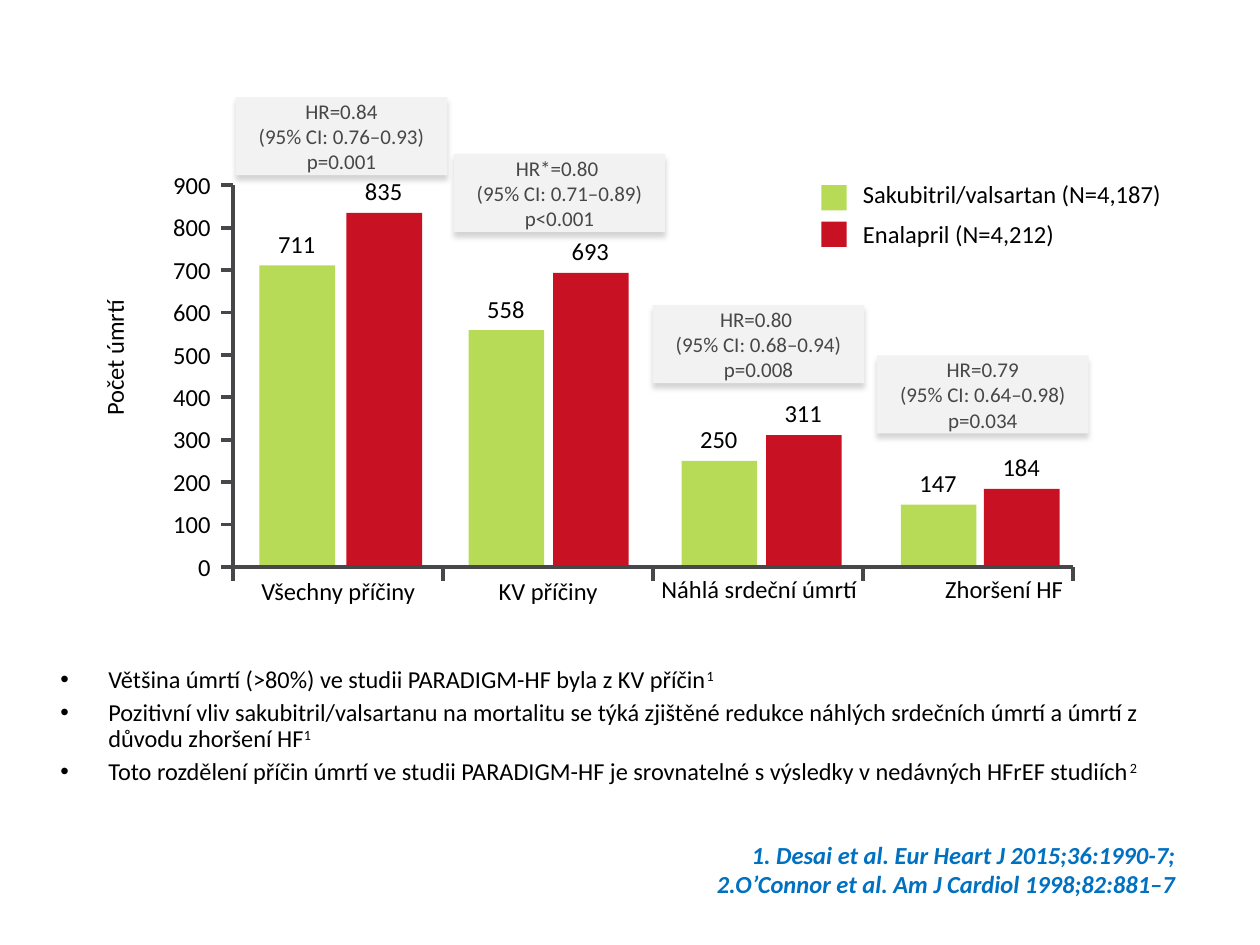
from dataclasses import dataclass

from lxml import etree
from pptx import Presentation
from pptx import util as u
from pptx.dml.color import RGBColor
from pptx.enum import shapes, text
from pptx.oxml import ns

BLACK = RGBColor(0, 0, 0)
GREY = RGBColor(0x47, 0x47, 0x49)
PALE = RGBColor(0xF2, 0xF2, 0xF2)
GREEN = RGBColor(0xB8, 0xDB, 0x57)
RED = RGBColor(0xC9, 0x11, 0x24)
BLUE = RGBColor(0x00, 0x70, 0xC0)

LEFT, CENTER, RIGHT = text.PP_ALIGN.LEFT, text.PP_ALIGN.CENTER, text.PP_ALIGN.RIGHT
AXIS_X, AXIS_TOP, AXIS_Y = 1.85, 1.47, 4.5
CATEGORY_W = 1.667
MAX_VALUE, STEP = 900, 100
BAR_W, LABEL_H = 0.6, 0.34


@dataclass
class Box:
    left: float
    top: float
    width: float
    height: float

    def lengths(self):
        return [u.Inches(v) for v in (self.left, self.top, self.width, self.height)]


@dataclass
class Group:
    """One cause of death: its label, bar pair and hazard ratio note."""
    name: str
    label: Box
    bar_lefts: tuple[float, float]
    values: tuple[int, int]
    note: Box
    note_lines: tuple[str, str]
    label_format: dict


TIGHT = {"line_spacing": u.Pt(16)}
GROUPS = [
    Group("Všechny příčiny", Box(1.89, 4.52, 1.59, 0.34), (2.06, 2.75), (711, 835),
          Box(1.87, 0.77, 1.68, 0.62), ("HR=0.84\n(95% CI: 0.76–0.93)", "p=0.001"), {}),
    Group("KV příčiny", Box(3.8, 4.52, 1.1, 0.34), (3.72, 4.39), (558, 693),
          Box(3.6, 1.22, 1.68, 0.62), ("HR*=0.80 \n(95% CI: 0.71–0.89)", "p<0.001"), {}),
    Group("Náhlá srdeční úmrtí", Box(5.07, 4.52, 1.91, 0.33), (5.41, 6.08), (250, 311),
          Box(5.18, 2.42, 1.68, 0.62), ("HR=0.80 \n(95% CI: 0.68–0.94)", "p=0.008"), TIGHT),
    Group("Zhoršení HF", Box(6.97, 4.52, 2, 0.33), (7.15, 7.81), (147, 184),
          Box(6.96, 2.82, 1.68, 0.62), ("HR=0.79\n(95% CI: 0.64–0.98)", "p=0.034"), TIGHT),
]
BULLETS = [
    ("Většina úmrtí (>80%) ve studii PARADIGM-HF byla z KV příčin", "1"),
    ("Pozitivní vliv sakubitril/valsartanu na mortalitu se týká zjištěné redukce "
     "náhlých srdečních úmrtí a úmrtí z důvodu zhoršení HF", "1"),
    ("Toto rozdělení příčin úmrtí ve studii PARADIGM-HF je srovnatelné s výsledky "
     "v nedávných HFrEF studiích", "2"),
]


def apply(obj, values: dict):
    for name, value in values.items():
        setattr(obj, name, value)


def style_run(r, size: float, color: RGBColor, **extra):
    apply(r.font, {"name": "Calibri", "size": u.Pt(size), **extra})
    r.font.color.rgb = color


def write(tf, lines, align, size=14, color=BLACK, paragraph=None, **font):
    for i, line in enumerate(lines):
        p = tf.paragraphs[0] if i == 0 else tf.add_paragraph()
        p.text = line
        apply(p, {"alignment": align, **(paragraph or {})})
        for r in p.runs:
            style_run(r, size, color, **font)


def add_text(slide, box: Box, lines, align, wrap=False, **style):
    sp = slide.shapes.add_textbox(*box.lengths())
    apply(sp.text_frame, {"word_wrap": wrap, "auto_size": text.MSO_AUTO_SIZE.SHAPE_TO_FIT_TEXT})
    write(sp.text_frame, lines, align, **style)
    return sp


def add_rect(slide, box: Box, color: RGBColor):
    sp = slide.shapes.add_shape(shapes.MSO_SHAPE.RECTANGLE, *box.lengths())
    sp.shadow.inherit = False
    sp.fill.solid()
    sp.fill.fore_color.rgb = color
    sp.line.fill.background()
    return sp


def add_note(slide, box: Box, lines):
    sp = add_rect(slide, box, PALE)
    effects = sp._element.spPr.find(ns.qn("a:effectLst"))
    shadow = etree.SubElement(effects, ns.qn("a:outerShdw"), blurRad=str(u.Pt(3)),
                              dist=str(u.Pt(3)), dir="5400000", algn="t", rotWithShape="0")
    black = etree.SubElement(shadow, ns.qn("a:srgbClr"), val="000000")
    etree.SubElement(black, ns.qn("a:alpha"), val="16000")
    sides = ("left", "top", "right", "bottom")
    apply(sp.text_frame, {f"margin_{side}": u.Inches(0.08) for side in sides})
    apply(sp.text_frame, {"word_wrap": True, "vertical_anchor": text.MSO_ANCHOR.MIDDLE})
    write(sp.text_frame, lines, CENTER, size=12, color=GREY)


def style_line(sp):
    sp.line.color.rgb = GREY
    sp.line.width = u.Pt(2.25)


def add_tick(slide, x1: float, y1: float, x2: float, y2: float):
    line = slide.shapes.add_connector(shapes.MSO_CONNECTOR.STRAIGHT,
                                      *[u.Inches(v) for v in (x1, y1, x2, y2)])
    style_line(line)
    etree.SubElement(line._element.spPr, ns.qn("a:effectLst"))


def value_y(value: float) -> float:
    return AXIS_Y - value / MAX_VALUE * (AXIS_Y - AXIS_TOP)


def add_axes(slide):
    for value in range(0, MAX_VALUE + 1, STEP):
        y, label = value_y(value), str(value)
        width = 0.2 + 0.11 * len(label)
        add_tick(slide, AXIS_X, y, AXIS_X - 0.1, y)
        add_text(slide, Box(1.77 - width, y - LABEL_H / 2, width, LABEL_H), [label], RIGHT)
    for i in range(len(GROUPS) + 1):
        x = AXIS_X + i * CATEGORY_W
        add_tick(slide, x, AXIS_Y, x, AXIS_Y + 0.11)
    title = add_text(slide, Box(0.31, 2.67, 1.2, LABEL_H), ["Počet úmrtí"], CENTER)
    title.rotation = 270


def add_axis_outline(slide):
    end_x = AXIS_X + len(GROUPS) * CATEGORY_W
    builder = slide.shapes.build_freeform(u.Inches(AXIS_X), u.Inches(AXIS_TOP))
    builder.add_line_segments([(u.Inches(AXIS_X), u.Inches(AXIS_Y)),
                               (u.Inches(end_x), u.Inches(AXIS_Y))], close=False)
    sp = builder.convert_to_shape()
    sp.shadow.inherit = False
    sp.fill.background()
    style_line(sp)


def add_group(slide, group: Group):
    add_note(slide, group.note, group.note_lines)
    add_text(slide, group.label, [group.name], CENTER, wrap=group.label.width == 2,
             paragraph=group.label_format)
    for left, value, color in zip(group.bar_lefts, group.values, (GREEN, RED)):
        top = value_y(value)
        add_rect(slide, Box(left, top, BAR_W, AXIS_Y - top), color)
        add_text(slide, Box(left + 0.03, top - LABEL_H, 0.53, LABEL_H), [str(value)], CENTER)


def add_legend(slide):
    for top, color in ((1.47, GREEN), (1.76, RED)):
        add_rect(slide, Box(6.52, top, 0.2, 0.2), color)
    add_text(slide, Box(6.75, 1.37, 2.79, 0.66),
             ["Sakubitril/valsartan (N=4,187)", "Enalapril (N=4,212)"], LEFT,
             paragraph={"space_after": u.Pt(6)})


def fill_body(body):
    box = Box(0.38, 5, 9.23, 1.43)
    apply(body, dict(zip(("left", "top", "width", "height"), box.lengths())))
    tf = body.text_frame
    apply(tf, {"auto_size": text.MSO_AUTO_SIZE.NONE, "margin_top": u.Inches(0.3)})
    for i, (line, reference) in enumerate(BULLETS):
        p = tf.paragraphs[0] if i == 0 else tf.add_paragraph()
        apply(p, {"line_spacing": 0.9, "space_before": u.Pt(2.8), "space_after": u.Pt(1)})
        pPr = p._p.get_or_add_pPr()
        pPr.set("marL", str(u.Inches(0.38)))
        pPr.set("indent", str(-u.Inches(0.38)))
        for content, baseline in ((line, "0"), (reference, "30000")):
            r = p.add_run()
            r.text = content
            style_run(r, 13.9, BLACK)
            r._r.get_or_add_rPr().set("baseline", baseline)


def main():
    prs = Presentation()
    prs.slide_width, prs.slide_height = u.Inches(10), u.Inches(7.5)
    slide = prs.slides.add_slide(prs.slide_layouts[1])
    title = slide.shapes.title._element
    title.getparent().remove(title)
    fill_body(slide.placeholders[1])
    sources = add_text(slide, Box(5.44, 6.61, 3.99, 0.57),
                       ["1. Desai et al. Eur Heart J 2015;36:1990-7;",
                        "2.O’Connor et al. Am J Cardiol 1998;82:881–7"],
                       RIGHT, wrap=True, color=BLUE, bold=True, italic=True)
    sources.text_frame.vertical_anchor = text.MSO_ANCHOR.BOTTOM
    add_axes(slide)
    for group in GROUPS:
        add_group(slide, group)
    add_axis_outline(slide)
    add_legend(slide)
    prs.save("out.pptx")


if __name__ == "__main__":
    main()
